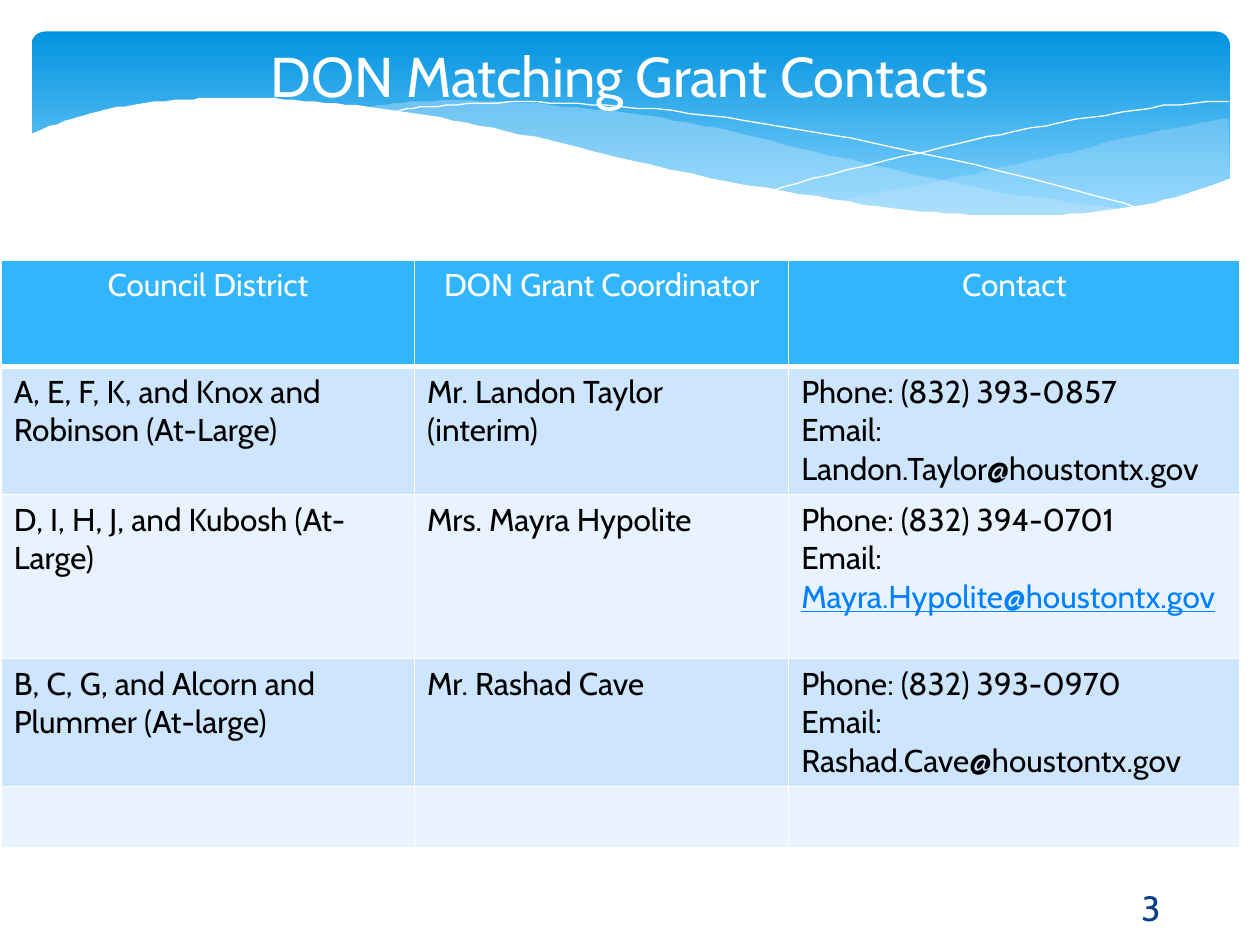
import pptx
import pptx.dml.color
import pptx.enum.shapes
import pptx.enum.text
import pptx.oxml.ns
import pptx.util
from lxml import etree

Pt = pptx.util.Pt
ALIGN = pptx.enum.text.PP_ALIGN
ANCHOR = pptx.enum.text.MSO_ANCHOR
HUES = {"white": "FFFFFF", "black": "000000", "deep": "0293E0", "pale": "83D3FE",
        "mist": "C6E7FC", "head": "31B6FD", "odd": "CEE5FE", "even": "E8F3FF",
        "link": "0080FF", "navy": "073E87"}

RIGHT = [[(702, 67.7), (673, 72.7), (641.5, 79.2), (620, 85), (579.6, 94.3),
          (525, 105.8), (476, 115.2)],
         [(476, 115.2), (507.6, 118.8), (536.4, 121.7), (570, 123.8), (601, 123.8),
          (628, 121.7), (651.6, 117.4), (673, 112.3), (702.7, 101.5)]]
LEFT = [[(643, 120.2), (602.6, 114.5), (558, 107.3), (508.3, 96.5), (452.9, 83.5),
         (409.7, 73.4), (370, 66.2), (334.8, 61.9), (302.4, 59), (273.6, 57.6),
         (247.7, 57.6), (225.4, 59), (206, 61.9)],
        [(206, 61.9), (246.2, 67.7), (290.9, 76.3), (353.5, 90.7), (407.5, 103),
         (456.5, 112.3), (500.4, 118.8), (538.6, 122.4), (573, 124.6),
         (603.4, 123.8), (624.2, 122.4), (643, 120.2)]]
FALL = [[(222.5, 64.8), (236.2, 61.9), (261.4, 59.8), (299.5, 58.3), (337.7, 59.8),
         (383.8, 63.4), (437.8, 70.6), (500.4, 82.1), (572.4, 97.9), (653, 119.5)]]
RISE = [[(441.4, 108.7), (483.8, 97.2), (538.6, 84.2), (580.3, 74.9), (623.5, 67),
         (665.3, 60.5), (702, 57.6)]]
WAVE = [[(703.4, 101.5), (676.8, 110.9), (647.3, 118.1), (612, 122.4), (582.5, 123.1),
         (547.9, 122.4), (509.8, 118.8), (466.6, 112.3), (416.9, 103.7),
         (362.2, 92.2), (321.8, 82.1), (281.5, 73.4), (244.8, 66.2), (210.2, 61.2),
         (180, 58.3), (151.9, 56.2), (127.4, 56.2), (105, 56.9), (76.3, 59.8),
         (54.7, 64.1), (37.4, 69.1), (16.6, 77)],
        [(16.6, 161.3), (703.4, 161.3)]]

HEADS = ["Council District", "DON Grant Coordinator", "Contact"]
STAFF = [
    ("A, E, F, K, and Knox and Robinson (At-Large)", "Mr. Landon Taylor (interim)",
     "(832) 393-0857", "Landon.Taylor@houstontx.gov", False),
    ("D, I, H, J, and Kubosh (At-Large)", "Mrs. Mayra Hypolite",
     "(832) 394-0701", "Mayra.Hypolite@houstontx.gov", True),
    ("B, C, G, and Alcorn and Plummer (At-large)", "Mr. Rashad Cave",
     "(832) 393-0970", "Rashad.Cave@houstontx.gov", False),
]


def tone(name):
    """Return the named colour."""
    return pptx.dml.color.RGBColor.from_string(HUES[name])


def smooth(knots, steps=5):
    """Sample a Catmull-Rom curve through the knots."""
    if len(knots) < 3:
        return knots
    ends = [knots[0], *knots, knots[-1]]
    out = []
    for a, b, c, d in zip(ends, ends[1:], ends[2:], ends[3:]):
        for t in (n / steps for n in range(steps)):
            out.append(tuple(
                (2 * q + (r - p) * t + (2 * p - 5 * q + 4 * r - s) * t ** 2
                 + (3 * q - p - 3 * r + s) * t ** 3) / 2
                for p, q, r, s in zip(a, b, c, d)))
    return out + [knots[-1]]


class Deck:
    """Hold the style and the current slide."""

    def __init__(self, font):
        """Open a deck with one blank slide."""
        self.font = font
        self.show = pptx.Presentation()
        self.show.slide_width, self.show.slide_height = Pt(720), Pt(540)
        self.slide = self.show.slides.add_slide(self.show.slide_layouts[6])
        self.shapes = self.slide.shapes

    def style(self, para, size, hue, align=ALIGN.LEFT):
        """Set the font and alignment of a paragraph."""
        para.alignment = align
        para.font.name, para.font.size = self.font, Pt(size)
        para.font.color.rgb = tone(hue)

    def banner(self, x, y, w, h):
        """Draw the rounded gradient band."""
        kind = pptx.enum.shapes.MSO_SHAPE.ROUNDED_RECTANGLE
        band = self.shapes.add_shape(kind, Pt(x), Pt(y), Pt(w), Pt(h))
        band.adjustments[0] = 0.07
        band.shadow.inherit = False
        band.line.fill.background()
        band.fill.gradient()
        band.fill.gradient_angle = 270
        for stop, hue, spot in zip(band.fill.gradient_stops, ("deep", "pale"), (0, 0.9)):
            stop.color.rgb, stop.position = tone(hue), spot

    def curve(self, parts, fill=None, alpha=100):
        """Draw a filled outline, or a white hairline without a fill."""
        dots = [dot for part in parts for dot in smooth(part)]
        pen = self.shapes.build_freeform(*dots[0], scale=Pt(1))
        pen.add_line_segments(dots[1:], close=bool(fill))
        form = pen.convert_to_shape()
        form.shadow.inherit = False
        if not fill:
            form.fill.background()
            form.line.color.rgb, form.line.width = tone("white"), Pt(0)
            return
        form.line.fill.background()
        form.fill.solid()
        form.fill.fore_color.rgb = tone(fill)
        if alpha < 100:
            tint = form.fill._xPr.find(".//" + pptx.oxml.ns.qn("a:srgbClr"))
            etree.SubElement(tint, pptx.oxml.ns.qn("a:alpha"), val=str(alpha * 1000))

    def text(self, x, y, w, h, words, size, hue, anchor=ANCHOR.TOP):
        """Add a centred line of text."""
        frame = self.shapes.add_textbox(Pt(x), Pt(y), Pt(w), Pt(h)).text_frame
        frame.word_wrap, frame.vertical_anchor = True, anchor
        frame.text = words
        self.style(frame.paragraphs[0], size, hue, ALIGN.CENTER)

    def cell(self, cell, fill, lines, hue, align, foot):
        """Fill one cell with its colour, borders and text."""
        props = cell._tc.get_or_add_tcPr()
        for side, width in (("L", 1), ("R", 1), ("T", 1), ("B", foot)):
            edge = etree.SubElement(props, pptx.oxml.ns.qn("a:ln" + side), w=str(Pt(width)))
            paint = etree.SubElement(edge, pptx.oxml.ns.qn("a:solidFill"))
            etree.SubElement(paint, pptx.oxml.ns.qn("a:srgbClr"), val=HUES["white"])
        cell.fill.solid()
        cell.fill.fore_color.rgb = tone(fill)
        frame = cell.text_frame
        frame.text = "\n".join(lines)
        for para in frame.paragraphs:
            self.style(para, 18, hue, align)

    def table(self, x, y, cols, rows):
        """Add the contact table."""
        grid = self.shapes.add_table(len(rows), len(cols), Pt(x), Pt(y),
                                     Pt(sum(cols)), Pt(sum(rows))).table
        for col, width in zip(grid.columns, cols):
            col.width = Pt(width)
        for row, height in zip(grid.rows, rows):
            row.height = Pt(height)
        for cell, head in zip(grid.rows[0].cells, HEADS):
            self.cell(cell, "head", [head], "white", ALIGN.CENTER, 3)
        body = [([area], [name], ["Phone: " + phone, "Email: " + ("" if link else mail)])
                for area, name, phone, mail, link in STAFF]
        body.append(([], [], []))
        for num, items in enumerate(body, 1):
            for cell, lines in zip(grid.rows[num].cells, items):
                self.cell(cell, "odd" if num % 2 else "even", lines, "black", ALIGN.LEFT, 1)
        for num, (*_, mail, link) in enumerate(STAFF, 1):
            if link:
                run = grid.cell(num, 2).text_frame.paragraphs[1].add_run()
                run.text, run.font.underline = mail, True
                run.font.color.rgb = tone("link")


def main():
    """Build the slide."""
    deck = Deck("Cabin")
    deck.banner(18, 18, 684.7, 112.3)
    deck.curve(RIGHT, "mist", 29)
    deck.curve(LEFT, "mist", 40)
    deck.curve(FALL)
    deck.curve(RISE)
    deck.curve(WAVE, "white")
    deck.table(0.7, 148.5, [236.2, 213.8, 257.8], [61, 72, 93.6, 72, 35.3])
    deck.text(57, 20.2, 606, 46, "DON Matching Grant Contacts", 32, "white")
    deck.text(612, 504, 91.4, 28.8, "3", 20, "navy", ANCHOR.MIDDLE)
    deck.show.save("out.pptx")


if __name__ == "__main__":
    main()
